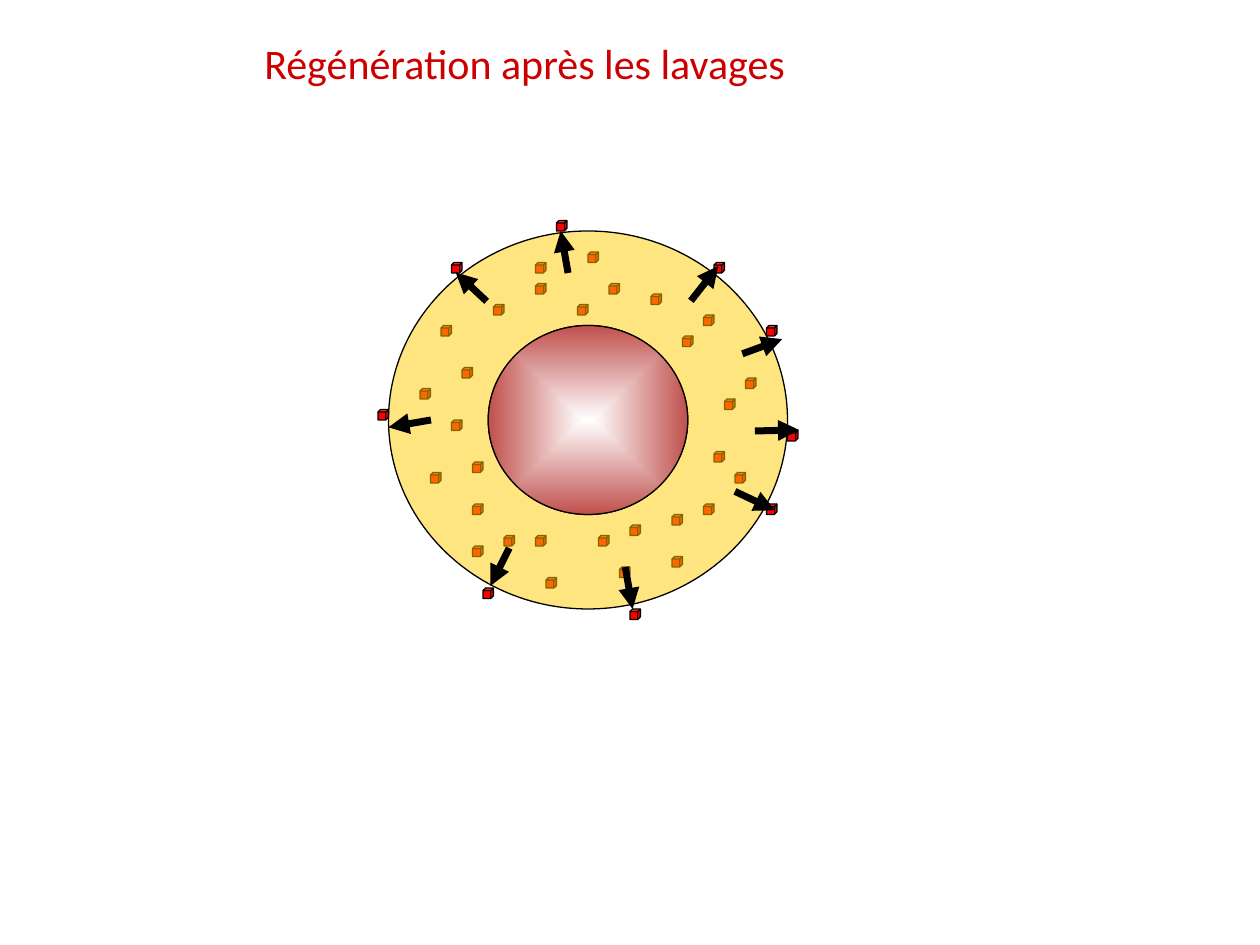
from typing import NamedTuple

from lxml import etree
from pptx import Presentation
from pptx import util as u
from pptx.dml.color import RGBColor
from pptx.enum import shapes, text
from pptx.oxml.ns import qn

CELL = u.Inches(1 / 12)  # the drawing sits on a grid of twelve cells to the inch
BLACK, RED, AMBER, ROSE, WHITE = "000000", "FF0000", "FFCC00", "C0504D", "FFFFFF"
ROUNDNESS = 0.55  # share of the way to the corner that bends a quarter into an oval


class Cube(NamedTuple):
    column: int
    row: int


class Arrow(NamedTuple):
    start_column: float
    start_row: float
    end_column: float
    end_row: float


class Oval(NamedTuple):
    column: float
    row: float
    columns: float
    rows: float


SHELL = Oval(37, 22, 38, 36)
CORE = Oval(46.5, 31, 19, 18)

INNER_CUBES = [Cube(*place) for place in (
    (68, 43), (65, 32), (71, 36), (64, 49), (62, 28), (44, 35),
    (67, 30), (59, 54), (51, 51), (45, 48), (47, 29), (58, 27),
    (52, 55), (60, 50), (43, 40), (51, 27), (41, 45), (42, 31),
    (67, 48), (64, 53), (45, 52), (56, 24), (69, 38), (70, 45),
    (57, 51), (40, 37), (51, 25), (55, 29), (45, 44), (48, 51),
)]
SURFACE_CUBES = [Cube(*place) for place in (
    (73, 48), (75, 41), (68, 25), (73, 31), (60, 58),
    (53, 21), (46, 56), (36, 39), (43, 25),
)]
ARROWS = [Arrow(*ends) for ends in (
    (59.55, 54, 60.25, 58), (70, 46.8, 73.8, 48.6), (48.5, 52.2, 46.7, 55.8),
    (41.05, 40, 37, 40.7), (46.35, 28.7, 43.4, 25.95), (54.1, 26, 53.4, 22),
    (65.8, 28.65, 68.4, 25.35), (70.7, 33.7, 74.5, 32.3), (71.9, 41.05, 76.1, 40.95),
)]


def color(value: str) -> RGBColor:
    return RGBColor.from_string(value)


def cells(*counts: float) -> list[int]:
    return [round(count * CELL) for count in counts]


def set_line(shape, width: float = 0.75) -> None:
    shape.line.color.rgb = color(BLACK)
    shape.line.width = u.Pt(width)


def finish(shape, fill: str) -> None:
    shape.shadow.inherit = False
    shape.fill.solid()
    shape.fill.fore_color.rgb = color(fill)
    set_line(shape)


def draw_cube(slide, cube: Cube) -> None:
    shape = slide.shapes.add_shape(
        shapes.MSO_SHAPE.CUBE, *cells(cube.column, cube.row, 1, 1))
    finish(shape, RED)


def extremes(oval: Oval) -> list[tuple[int, int]]:
    """Left, top, right and bottom points of an oval, in slide units."""
    left, top, width, height = cells(*oval)
    middle, centre = left + width // 2, top + height // 2
    return [(left, centre), (middle, top), (left + width, centre), (middle, top + height)]


def round_corners(outline) -> None:
    """Bend each straight segment into a quarter oval around the outline's centre."""
    centre = [int(outline.get(side)) / 2 for side in ("w", "h")]
    start = None
    for segment in list(outline):
        if segment.tag == qn("a:close"):
            continue
        end = [int(segment[0].get(axis)) for axis in ("x", "y")]
        if segment.tag == qn("a:lnTo"):
            corner = [a + b - c for a, b, c in zip(start, end, centre)]
            curve = etree.Element(qn("a:cubicBezTo"))
            controls = [[p + ROUNDNESS * (c - p) for p, c in zip(point, corner)]
                        for point in (start, end)]
            for x, y in (*controls, end):
                etree.SubElement(curve, qn("a:pt"), x=str(round(x)), y=str(round(y)))
            outline.replace(segment, curve)
        start = end


def draw_shell(slide, shell: Oval, core: Oval) -> None:
    outer = extremes(shell)
    left, *others = extremes(core)
    inner = [left, *reversed(others)]  # the opposite direction cuts a hole
    builder = slide.shapes.build_freeform(*outer[0])
    builder.add_line_segments([*outer[1:], outer[0]], close=True)
    builder.move_to(*inner[0])
    builder.add_line_segments([*inner[1:], inner[0]], close=True)
    shape = builder.convert_to_shape()
    finish(shape, AMBER)
    properties = shape._element.spPr
    round_corners(next(properties.iter(qn("a:path"))))
    etree.SubElement(properties.find(qn("a:solidFill"))[0], qn("a:alpha"), val="50000")


def draw_core(slide, core: Oval) -> None:
    shape = slide.shapes.add_shape(shapes.MSO_SHAPE.OVAL, *cells(*core))
    finish(shape, ROSE)
    shape.fill.gradient()
    for stop, value in zip(shape.fill.gradient_stops, (WHITE, ROSE)):
        stop.color.rgb = color(value)
    gradient = shape._element.spPr.find(qn("a:gradFill"))
    gradient.remove(gradient.find(qn("a:lin")))
    shading = etree.SubElement(gradient, qn("a:path"), {"path": "shape"})
    etree.SubElement(shading, qn("a:fillToRect"),
                     dict.fromkeys(("l", "t", "r", "b"), "50000"))


def draw_arrow(slide, arrow: Arrow) -> None:
    connector = slide.shapes.add_connector(
        shapes.MSO_CONNECTOR.STRAIGHT, *cells(*arrow))
    set_line(connector, 4)
    properties = connector._element.spPr
    etree.SubElement(properties.find(qn("a:ln")), qn("a:tailEnd"), type="triangle")
    etree.SubElement(properties, qn("a:effectLst"))


def add_title(slide, wording: str) -> None:
    box = slide.shapes.add_textbox(*cells(24, 3, 71, 6))
    frame = box.text_frame
    frame.word_wrap = True
    frame.auto_size = text.MSO_AUTO_SIZE.SHAPE_TO_FIT_TEXT
    run = frame.paragraphs[0].add_run()
    run.text = wording
    for name, value in {"name": "Calibri", "size": u.Pt(24)}.items():
        setattr(run.font, name, value)
    run.font.color.rgb = color("CC0000")


def main() -> None:
    presentation = Presentation()
    presentation.slide_width, presentation.slide_height = u.Inches(10), u.Inches(7.5)
    slide = presentation.slides.add_slide(presentation.slide_layouts[6])
    for cube in INNER_CUBES:
        draw_cube(slide, cube)
    draw_shell(slide, SHELL, CORE)
    draw_core(slide, CORE)
    for cube in SURFACE_CUBES:
        draw_cube(slide, cube)
    for arrow in ARROWS:
        draw_arrow(slide, arrow)
    add_title(slide, "Régénération après les lavages")
    presentation.save("out.pptx")


if __name__ == "__main__":
    main()
